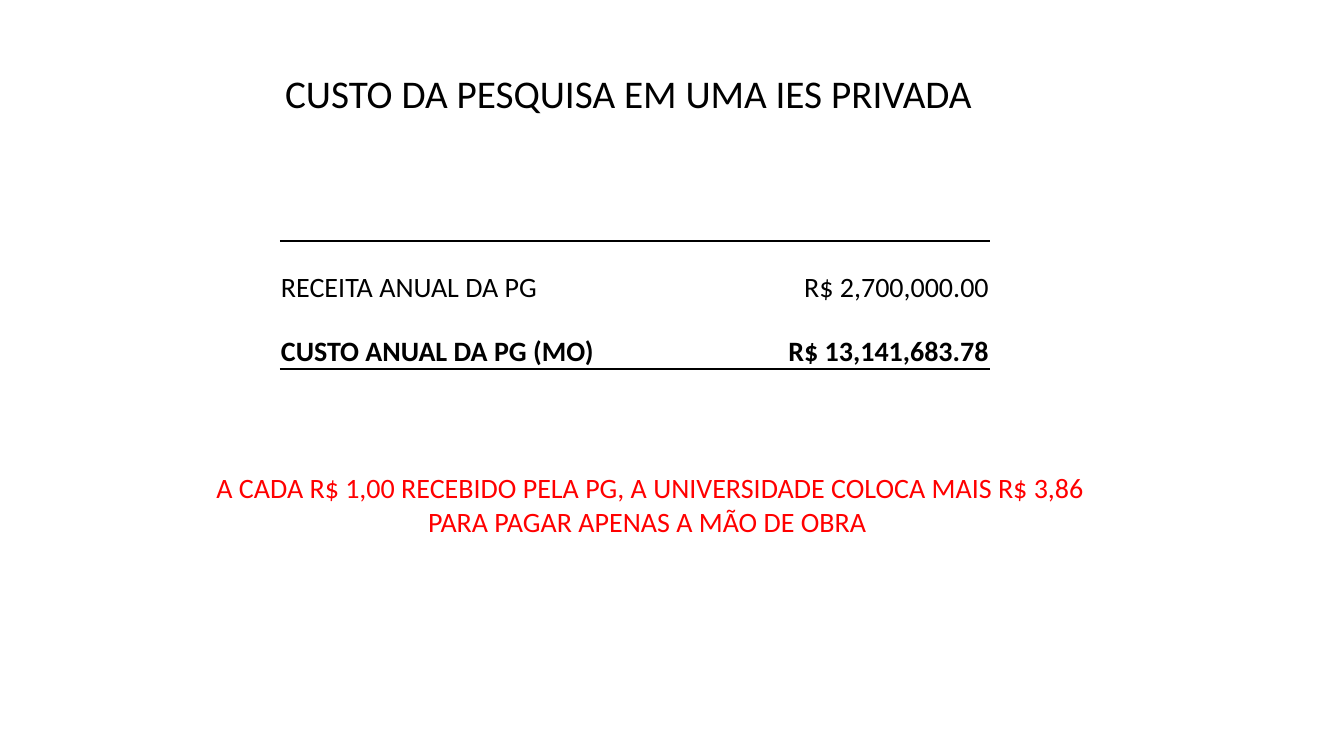
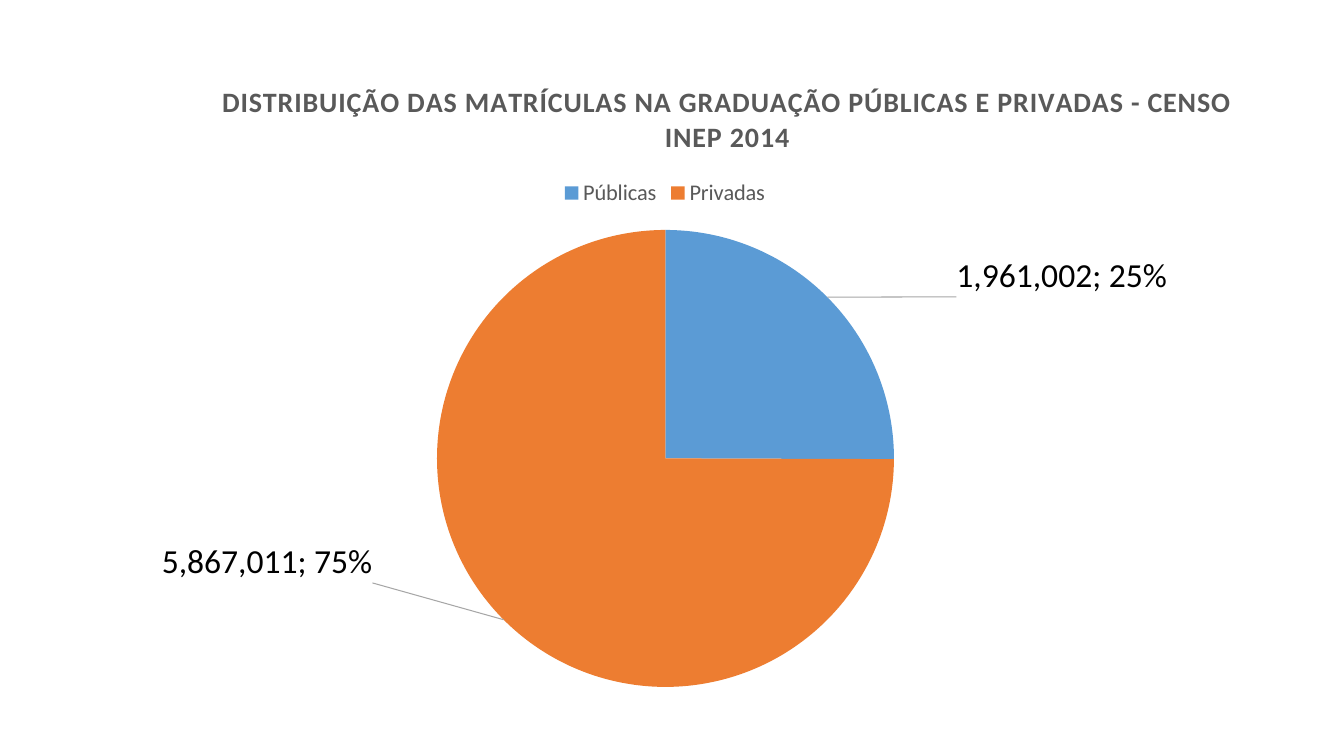
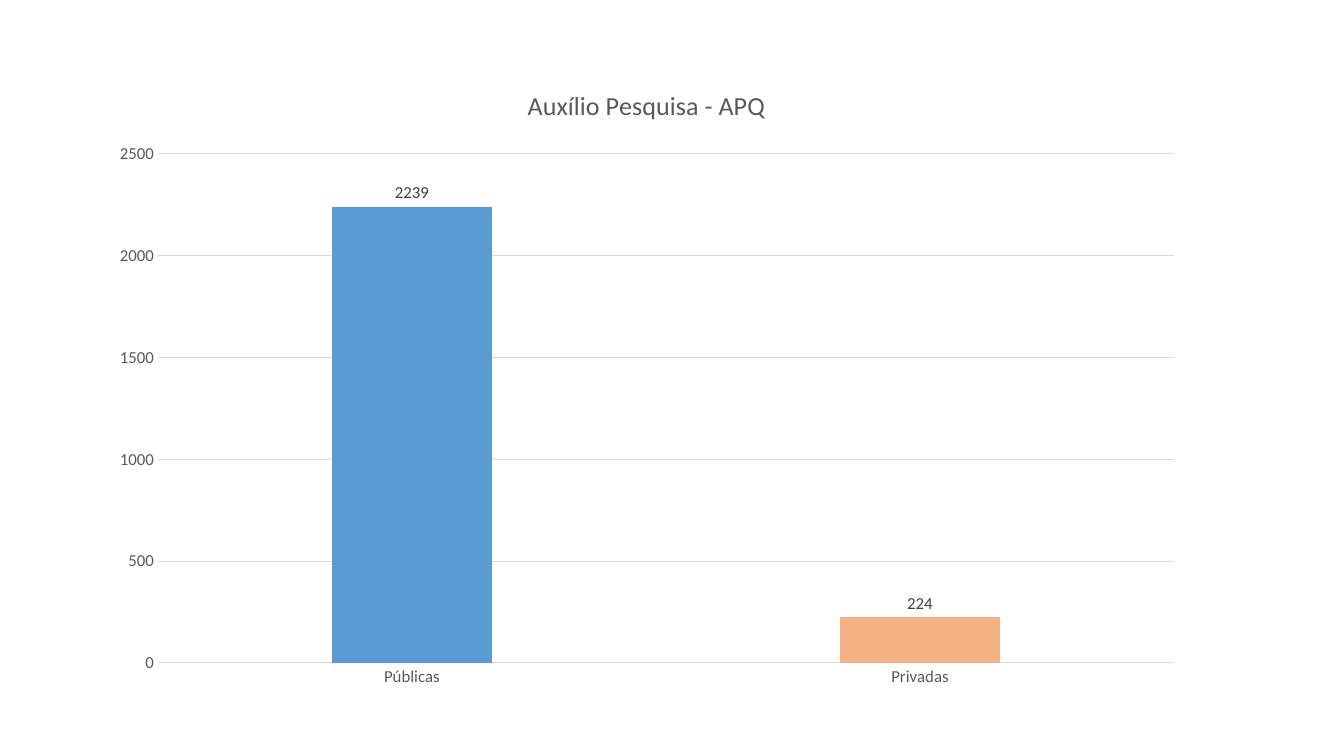
from lxml import etree
from pptx import Presentation
from pptx.chart.data import CategoryChartData
from pptx.dml.color import RGBColor
from pptx.enum.chart import XL_CHART_TYPE as ChartType
from pptx.enum.chart import XL_LABEL_POSITION as LabelPos
from pptx.enum.chart import XL_LEGEND_POSITION as LegendPos
from pptx.enum.chart import XL_TICK_MARK as TickMark
from pptx.enum.text import MSO_ANCHOR as Anchor
from pptx.enum.text import MSO_AUTO_SIZE as AutoSize
from pptx.enum.text import PP_ALIGN as Align
from pptx.oxml import parse_xml
from pptx.oxml.ns import nsdecls, qn
from pptx.util import Pt

PX = 9071  # EMU; the slide is 1344 by 756 px
BLACK, WHITE, RED = "000000", "FFFFFF", "FF0000"
GREY, DARK_GREY, LIGHT_GREY, LEADER_GREY = "595959", "404040", "D9D9D9", "A6A6A6"
BLUE, ORANGE, PEACH = "5B9BD5", "ED7D31", "F4B183"
NO_TABLE_STYLE = "{2D5ABB26-0587-4C30-8999-92F81FD0307C}"
rgb = RGBColor.from_string


def style(font, size, color, bold=False):
    font.name, font.size, font.bold = "Calibri", Pt(size), bold
    font.color.rgb = rgb(color)


def lay_out(part, index, mode, **fractions):
    """Give a chart part a manual layout, as its child number index."""
    for old in part.findall(qn("c:layout")):
        part.remove(old)
    layout = parse_xml(f"<c:layout {nsdecls('c')}><c:manualLayout/></c:layout>")
    settings = {"xMode": mode, "yMode": mode}
    if "w" in fractions:
        settings = {"layoutTarget": "inner", **settings}
    for name, value in {**settings, **fractions}.items():
        etree.SubElement(layout[0], qn(f"c:{name}")).set("val", str(value))
    part.insert(index, layout)


prs = Presentation()
prs.slide_width, prs.slide_height = 1344 * PX, 756 * PX
title_only, blank = prs.slide_layouts[5], prs.slide_layouts[6]

# Slide 1: cost of research
slide = prs.slides.add_slide(title_only)
title = slide.shapes.title
title.left, title.top, title.width, title.height = 275 * PX, 64 * PX, 716 * PX, 57 * PX
title.text_frame.text = "CUSTO DA PESQUISA EM UMA IES PRIVADA"
title.text_frame.vertical_anchor = Anchor.TOP
title.text_frame.word_wrap = False
title.text_frame.auto_size = AutoSize.SHAPE_TO_FIT_TEXT
title.text_frame.paragraphs[0].alignment = Align.LEFT
style(title.text_frame.paragraphs[0].font, 28, BLACK)

costs = [("RECEITA ANUAL DA PG", "R$ 2,700,000.00"),
         ("CUSTO ANUAL DA PG (MO)", "R$ 13,141,683.78")]
rules = [("lnT", 1.5), ("lnB", 2.25)]
frame = slide.shapes.add_table(2, 2, 280 * PX, 241 * PX, 710 * PX, 128 * PX)
cost_table = frame.table
cost_table.columns[0].width, cost_table.columns[1].width = 420 * PX, 290 * PX
frame._element.find(".//" + qn("a:tableStyleId")).text = NO_TABLE_STYLE
for row, (entry, (side, weight)) in enumerate(zip(costs, rules)):
    for col, text in enumerate(entry):
        cell = cost_table.cell(row, col)
        cell.text = text
        cell.vertical_anchor = Anchor.BOTTOM
        cell.margin_left = cell.margin_right = cell.margin_top = PX
        cell.margin_bottom = 0
        paragraph = cell.text_frame.paragraphs[0]
        paragraph.alignment = (Align.LEFT, Align.RIGHT)[col]
        style(paragraph.font, 20, BLACK, bold=row == 1)
        cell.fill.solid()
        cell.fill.fore_color.rgb = rgb(WHITE)
        cell._tc.tcPr.insert(0, parse_xml(
            f'<a:{side} {nsdecls("a")} w="{Pt(weight)}"><a:solidFill>'
            f'<a:srgbClr val="{BLACK}"/></a:solidFill></a:{side}>'))

conclusion = slide.shapes.add_textbox(203 * PX, 466 * PX, 895 * PX, 78 * PX).text_frame
conclusion.word_wrap = False
conclusion.auto_size = AutoSize.SHAPE_TO_FIT_TEXT
conclusion.text = ("A CADA R$ 1,00 RECEBIDO PELA PG, A UNIVERSIDADE COLOCA MAIS R$ 3,86\n"
                   "PARA PAGAR APENAS A MÃO DE OBRA ")
for paragraph in conclusion.paragraphs:
    paragraph.alignment = Align.CENTER
    style(paragraph.font, 20, RED)

# Slides 2 and 3: one chart each, public against private
charts = []
for kind, box, number_format, values, colors, heading, size, bold, title_at, plot_at in [
    (ChartType.PIE, (19, 63, 1292, 652), "#,##0", (1961002, 5867011), (BLUE, ORANGE),
     "DISTRIBUIÇÃO DAS MATRÍCULAS NA GRADUAÇÃO PÚBLICAS E PRIVADAS - CENSO INEP 2014",
     20, True, (217, 77), (437, 230, 457, 457)),
    (ChartType.COLUMN_CLUSTERED, (98, 65, 1098, 635), "General", (2239, 224), (BLUE, PEACH),
     "Auxílio Pesquisa - APQ", 18.6, False, (523, 82), (158, 154, 1016, 509)),
]:
    slide = prs.slides.add_slide(blank)
    data = CategoryChartData(number_format=number_format)
    data.categories = ["Públicas", "Privadas"]
    data.add_series("Series 1", values)
    left, top, width, height = box
    chart = slide.shapes.add_chart(kind, *(side * PX for side in box), data).chart
    style(chart.font, 10, BLACK)
    chart.has_legend = False
    chart.has_title = True
    chart.chart_title.text_frame.text = heading
    heading_run = chart.chart_title.text_frame.paragraphs[0].runs[0]
    style(heading_run.font, size, GREY, bold)
    if bold:
        heading_run._r.get_or_add_rPr().set("spc", "50")
    x, y = title_at
    lay_out(chart.chart_title._element, 1, "edge",
            x=(x - left) / width, y=(y - top) / height)
    x, y, w, h = plot_at
    lay_out(chart._chartSpace.chart.plotArea, 0, "edge", x=(x - left) / width,
            y=(y - top) / height, w=w / width, h=h / height)
    plot = chart.plots[0]
    plot.vary_by_categories = kind == ChartType.PIE
    for index, color in enumerate(colors):
        fill = plot.series[0].points[index].format.fill
        fill.solid()
        fill.fore_color.rgb = rgb(color)
    charts.append(chart)
enrolment, grants = charts

# Enrolment pie: legend on top, labels pulled away from the slices
enrolment.has_legend = True
enrolment.legend.position = LegendPos.TOP
enrolment.legend.include_in_layout = False
style(enrolment.legend.font, 16, GREY)
slices = enrolment.plots[0].series[0]
for index, (dx, dy) in enumerate([(125, 4), (-127, -82)]):
    label = slices.points[index].data_label
    style(label.font, 24, BLACK)
    label.position = LabelPos.OUTSIDE_END
    element = slices._element.xpath(f"c:dLbls/c:dLbl[c:idx/@val='{index}']")[0]
    lay_out(element, 1, "factor", x=dx / 1292, y=dy / 652)
    element.find(qn("c:showPercent")).set("val", "1")
    etree.SubElement(element, qn("c:separator")).text = "; "
slices.data_labels.show_value = True
slices.data_labels.show_percentage = True
labels = slices._element.find(qn("c:dLbls"))
if labels.find(qn("c:showLeaderLines")) is None:
    etree.SubElement(labels, qn("c:showLeaderLines"))
labels.find(qn("c:showLeaderLines")).set("val", "1")
labels.append(parse_xml(
    f'<c:leaderLines {nsdecls("c", "a")}><c:spPr><a:ln w="{Pt(0.75)}"><a:solidFill>'
    f'<a:srgbClr val="{LEADER_GREY}"/></a:solidFill></a:ln></c:spPr></c:leaderLines>'))

# Grants columns
columns = grants.plots[0]
columns.gap_width, columns.overlap = 219, -27
columns.has_data_labels = True
columns.data_labels.show_value = True
columns.data_labels.position = LabelPos.OUTSIDE_END
style(columns.data_labels.font, 12, DARK_GREY)
for axis in (grants.category_axis, grants.value_axis):
    axis.major_tick_mark = axis.minor_tick_mark = TickMark.NONE
    style(axis.tick_labels.font, 12, GREY)
grants.value_axis.maximum_scale, grants.value_axis.major_unit = 2500, 500
grants.value_axis.minimum_scale = 0
grants.value_axis.format.line.fill.background()
for line in (grants.category_axis.format.line, grants.value_axis.major_gridlines.format.line):
    line.color.rgb = rgb(LIGHT_GREY)
    line.width = Pt(0.75)

prs.save("out.pptx")
